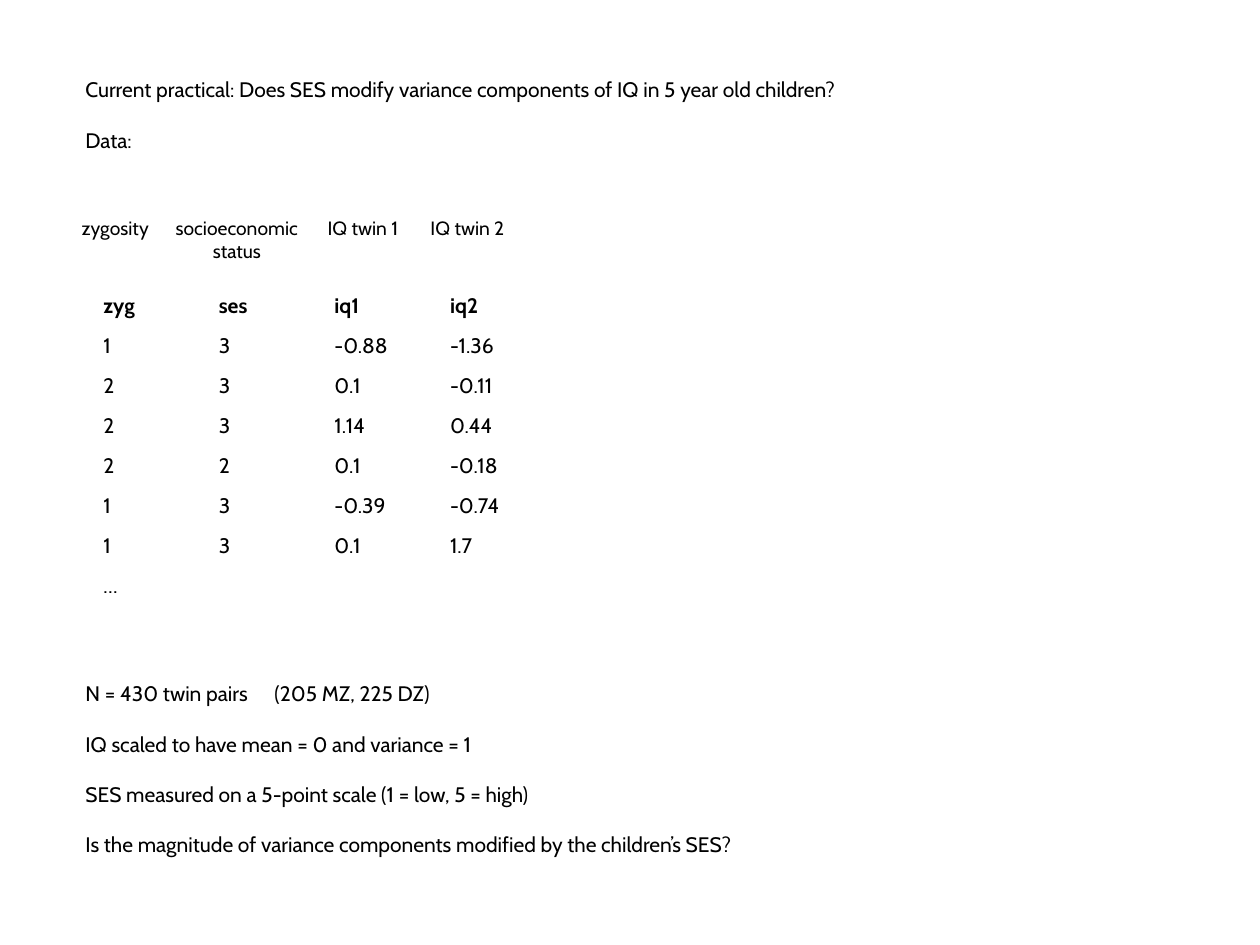
from dataclasses import dataclass

from lxml.etree import SubElement
from pptx import Presentation
from pptx.dml.color import RGBColor
from pptx.enum.text import MSO_AUTO_SIZE, PP_ALIGN as Align
from pptx.oxml.ns import qn
from pptx.util import Inches, Pt


@dataclass(frozen=True)
class Theme:
    font: str = "Cabin"
    ink: RGBColor = RGBColor(0, 0, 0)
    border: str = "FFFFFF"
    body: float = 12
    caption: float = 11
    line_gap: float = 14.4
    table_gap: float = 302


@dataclass(frozen=True)
class Line:
    text: str
    space_before: float = 0


@dataclass(frozen=True)
class TextBlock:
    left: float
    top: float
    width: float
    height: float
    lines: tuple[Line, ...]
    size: float
    align: Align = Align.LEFT


THEME = Theme()
GAP = THEME.line_gap

BODY = TextBlock(0.58, 0.56, 8.67, 6.56, (
    Line("Current practical: Does SES modify variance components of IQ in 5 year old children?"),
    Line("Data:", GAP),
    Line("N = 430 twin pairs\t(205 MZ, 225 DZ)", THEME.table_gap),
    Line("IQ scaled to have mean = 0 and variance = 1", GAP),
    Line("SES measured on a 5-point scale (1 = low, 5 = high)", GAP),
    Line("Is the magnitude of variance components modified by the children’s SES?", GAP),
), THEME.body)

CAPTIONS = [
    TextBlock(left, 1.67, width, height, (Line(text),), THEME.caption, Align.CENTER)
    for left, width, height, text in (
        (0.5, 0.83, 0.29, "zygosity"),
        (1.17, 1.42, 0.47, "socioeconomic status"),
        (2.42, 0.92, 0.29, "IQ twin 1"),
        (3.25, 0.92, 0.29, "IQ twin 2"),
    )
]

TWIN_ROWS = (
    ("zyg", "ses", "iq1", "iq2"),
    ("1", "3", "-0.88", "-1.36"),
    ("2", "3", "0.1", "-0.11"),
    ("2", "3", "1.14", "0.44"),
    ("2", "2", "0.1", "-0.18"),
    ("1", "3", "-0.39", "-0.74"),
    ("1", "3", "0.1", "1.7"),
    ("…", "", "", ""),
)


def style_font(para, size: float, bold: bool = False) -> None:
    font = para.font
    font.name, font.size, font.bold = THEME.font, Pt(size), bold
    font.color.rgb = THEME.ink


def draw_text(page, block: TextBlock) -> None:
    box = page.shapes.add_textbox(Inches(block.left), Inches(block.top),
                                  Inches(block.width), Inches(block.height))
    frame = box.text_frame
    frame.word_wrap = True
    frame.auto_size = MSO_AUTO_SIZE.SHAPE_TO_FIT_TEXT
    for index, line in enumerate(block.lines):
        para = frame.add_paragraph() if index else frame.paragraphs[0]
        para.text = line.text
        para.alignment = block.align
        para.space_before = Pt(line.space_before)
        style_font(para, block.size)


def draw_borders(cell, bottom: float) -> None:
    """Outline the cell with 1 pt lines, except for the given bottom width."""
    properties = cell._tc.get_or_add_tcPr()
    for side, width in (("L", 1), ("R", 1), ("T", 1), ("B", bottom)):
        edge = SubElement(properties, qn(f"a:ln{side}"), w=str(Pt(width)))
        fill = SubElement(edge, qn("a:solidFill"))
        SubElement(fill, qn("a:srgbClr"), val=THEME.border)


def draw_table(page, rows: tuple[tuple[str, ...], ...]) -> None:
    table = page.shapes.add_table(len(rows), len(rows[0]), Inches(0.75), Inches(2.33),
                                  Inches(3.67), Inches(2.54)).table
    table.first_row = table.horz_banding = False
    for row_index, row in enumerate(rows):
        header = row_index == 0
        for column_index, text in enumerate(row):
            cell = table.cell(row_index, column_index)
            cell.margin_left = cell.margin_right = Inches(0.07)
            cell.margin_top = cell.margin_bottom = 0
            cell.text = text
            style_font(cell.text_frame.paragraphs[0], THEME.body, header)
            draw_borders(cell, 3 if header else 1)
            cell.fill.background()


def main() -> None:
    deck = Presentation()
    deck.slide_width, deck.slide_height = Inches(10), Inches(7.5)
    page = deck.slides.add_slide(deck.slide_layouts[6])
    draw_text(page, BODY)
    draw_table(page, TWIN_ROWS)
    for caption in CAPTIONS:
        draw_text(page, caption)
    deck.save("out.pptx")


if __name__ == "__main__":
    main()
